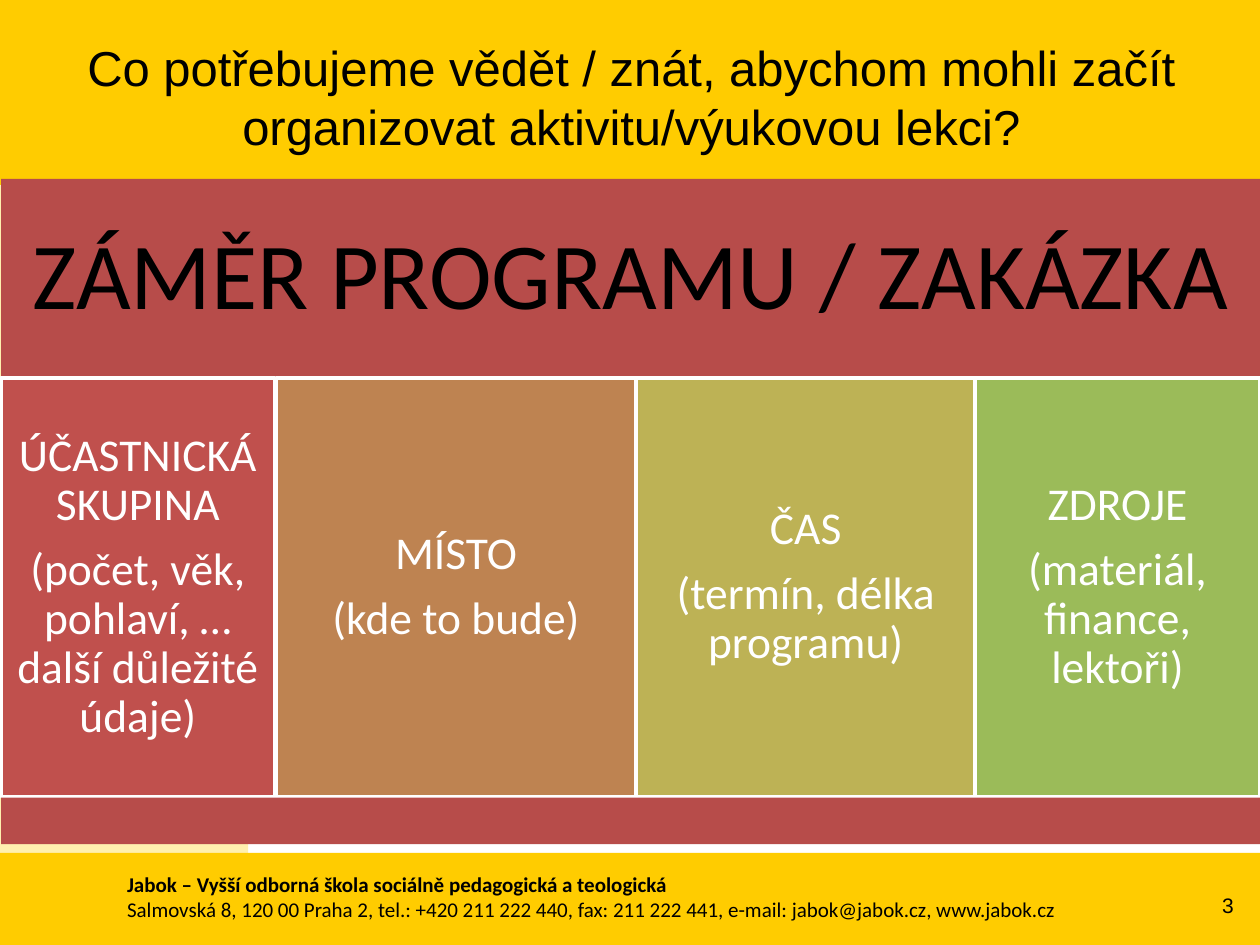
from pptx import Presentation
from pptx.dml.color import RGBColor
from pptx.enum import shapes, text
from pptx.util import Inches, Pt

BLACK, WHITE = "000000", "FFFFFF"
YELLOW, CREAM, RED = "FFCC00", "FFF0AF", "B74C4A"
CENTER, MIDDLE = text.PP_ALIGN.CENTER, text.MSO_ANCHOR.MIDDLE

prs = Presentation()
prs.slide_width, prs.slide_height = Inches(10), Inches(7.5)
slide = prs.slides.add_slide(prs.slide_layouts[6])


def block(left, top, width, height, fill=None, line=None):
    """Add a filled rectangle, or a plain text box when no fill is given."""
    place = [Inches(value) for value in (left, top, width, height)]
    if fill is None:
        return slide.shapes.add_textbox(*place)
    rect = slide.shapes.add_shape(shapes.MSO_SHAPE.RECTANGLE, *place)
    rect.shadow.inherit = False
    rect.fill.solid()
    rect.fill.fore_color.rgb = RGBColor.from_string(fill)
    if line:
        rect.line.color.rgb = RGBColor.from_string(line)
        rect.line.width = Pt(2)
    else:
        rect.line.fill.background()
    return rect


def write(box, *lines, size=12, font="Calibri", color=BLACK, align=text.PP_ALIGN.LEFT,
          anchor=text.MSO_ANCHOR.TOP, inset=None, spacing=None, after=None, bold_first=False):
    frame = box.text_frame
    frame.word_wrap = True
    frame.vertical_anchor = anchor
    if inset is not None:
        frame.margin_left = frame.margin_right = Inches(inset)
        frame.margin_top = frame.margin_bottom = Inches(inset)
    for index, line in enumerate(lines):
        paragraph = frame.add_paragraph() if index else frame.paragraphs[0]
        paragraph.alignment = align
        paragraph.line_spacing = spacing
        paragraph.space_after = after
        run = paragraph.add_run()
        run.text = line
        run.font.size = Pt(size)
        run.font.name = font
        run.font.bold = bold_first and index == 0
        run.font.color.rgb = RGBColor.from_string(color)


# Background bands and footer
block(0, 0, 10, 1.47, YELLOW)
block(0, 1.47, 1.97, 6.03, CREAM)
block(0, 6.77, 10, 0.76, YELLOW)
write(block(0.91, 6.87, 8.19, 0.5),
      "Jabok – Vyšší odborná škola sociálně pedagogická a teologická",
      "Salmovská 8, 120 00 Praha 2, tel.: +420 211 222 440, fax: 211 222 441, "
      "e-mail: jabok@jabok.cz, www.jabok.cz",
      bold_first=True)
write(block(9.26, 6.98, 0.63, 0.4), "3", font="Arial",
      align=text.PP_ALIGN.RIGHT, anchor=MIDDLE)

# Title
write(block(0.51, 0.14, 9, 1.25),
      "Co potřebujeme vědět / znát, abychom mohli začít organizovat aktivitu/výukovou lekci?",
      size=28, font="Arial", align=CENTER, anchor=MIDDLE)

# Programme intent above its four conditions
write(block(0.01, 1.42, 9.99, 1.58, RED), "ZÁMĚR PROGRAMU / ZAKÁZKA",
      size=54, align=CENTER, anchor=MIDDLE, inset=0.23, spacing=0.9)

conditions = [
    (0.01, 2.17, "C0504D", "ÚČASTNICKÁ SKUPINA", "(počet, věk, pohlaví, … další důležité údaje)"),
    (2.19, 2.86, "BE8351", "MÍSTO", "(kde to bude)"),
    (5.05, 2.69, "BDB255", "ČAS", "(termín, délka programu)"),
    (7.74, 2.26, "9BBB59", "ZDROJE", "(materiál, finance, lektoři)"),
]
for left, width, fill, heading, detail in conditions:
    write(block(left, 3, width, 3.32, fill, line=WHITE), heading, detail,
          size=26, color=WHITE, align=CENTER, anchor=MIDDLE,
          inset=0.11, spacing=0.9, after=Pt(9))

block(0.01, 6.33, 9.99, 0.37, RED)

prs.save("out.pptx")
